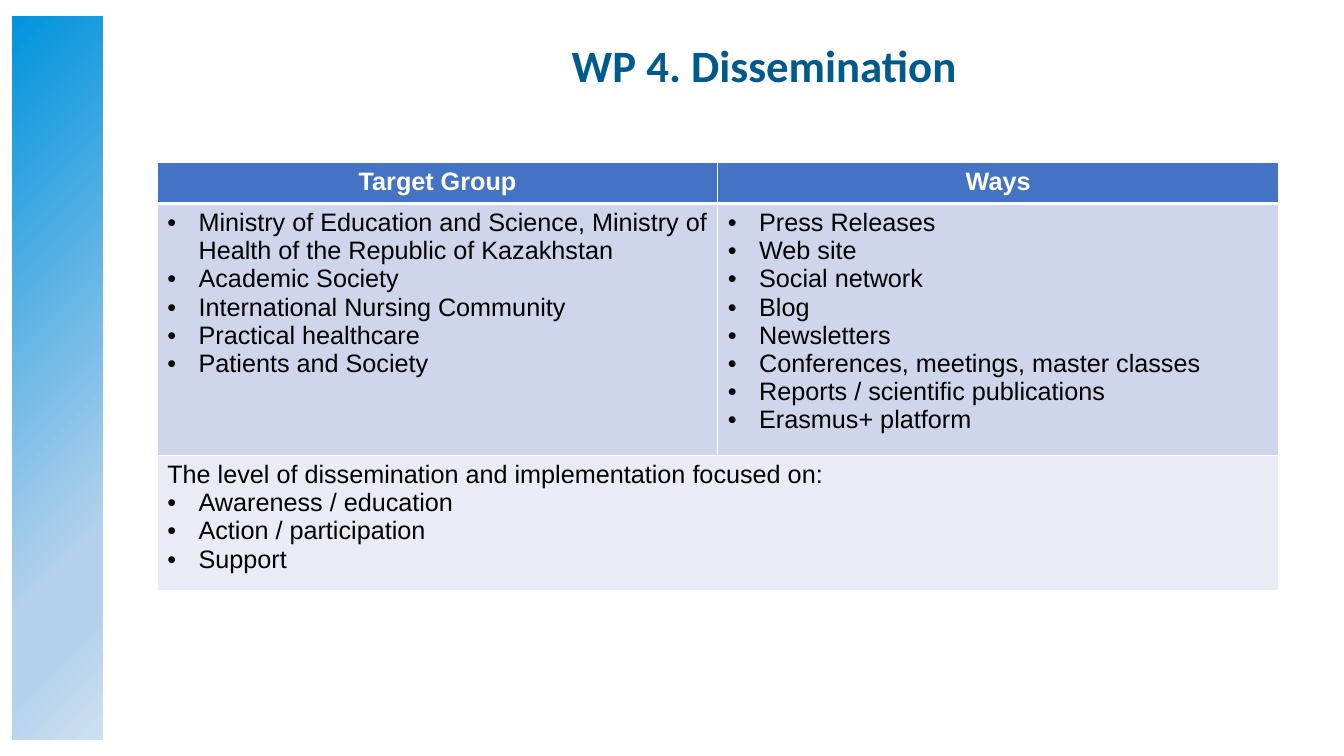
from dataclasses import dataclass

from lxml.etree import SubElement
from pptx import Presentation
from pptx.dml.color import RGBColor
from pptx.enum.shapes import MSO_SHAPE
from pptx.enum.text import MSO_ANCHOR, PP_ALIGN
from pptx.oxml.ns import qn
from pptx.slide import Slide
from pptx.table import _Cell
from pptx.text.text import TextFrame
from pptx.util import Inches, Pt


@dataclass(frozen=True)
class Theme:
    title: str = "005A8C"
    white: str = "FFFFFF"
    text: str = "000000"
    header: str = "4472C4"
    group_row: str = "CFD5EA"
    level_row: str = "E9EBF5"
    band: tuple = ((0, "0093DD"), (74, "B3D1EC"), (83, "B3D1EC"), (100, "CCE0F2"))
    title_font: str = "Calibri"
    table_font: str = "Arial"
    title_size: int = 32
    table_size: int = 18


@dataclass(frozen=True)
class CellContent:
    row: int
    column: int
    fill: str
    heading: str = ""
    bullets: tuple[str, ...] = ()


THEME = Theme()
BULLET_INDENT = Inches(0.31)
COLUMN_WIDTHS = (5.56, 5.56)
ROW_HEIGHTS = (0.41, 2.5, 1.34)
CELLS = (
    CellContent(0, 0, THEME.header, "Target Group"),
    CellContent(0, 1, THEME.header, "Ways"),
    CellContent(1, 0, THEME.group_row, bullets=(
        "Ministry of Education and Science, Ministry of Health of the Republic of Kazakhstan",
        "Academic Society",
        "International Nursing Community",
        "Practical healthcare",
        "Patients and Society",
    )),
    CellContent(1, 1, THEME.group_row, bullets=(
        "Press Releases",
        "Web site",
        "Social network",
        "Blog",
        "Newsletters",
        "Conferences, meetings, master classes",
        "Reports / scientific publications",
        "Erasmus+ platform",
    )),
    CellContent(
        2, 0, THEME.level_row,
        "The level of dissemination and implementation focused on:",
        ("Awareness / education", "Action / participation", "Support"),
    ),
)


def write_paragraph(frame: TextFrame, text: str, *, first: bool = False,
                    font: str = THEME.table_font, size: int = THEME.table_size,
                    color: str = THEME.text, bold: bool = False,
                    align: PP_ALIGN = PP_ALIGN.LEFT, bullet: bool = False,
                    line_spacing: float = 1.0) -> None:
    paragraph = frame.paragraphs[0] if first else frame.add_paragraph()
    paragraph.alignment = align
    paragraph.line_spacing = line_spacing
    paragraph.space_before = Pt(0)
    if bullet:
        properties = paragraph._p.get_or_add_pPr()
        properties.set("marL", str(BULLET_INDENT))
        properties.set("indent", str(-BULLET_INDENT))
        SubElement(properties, qn("a:buFont"), typeface="Arial")
        SubElement(properties, qn("a:buChar"), char="•")
    run = paragraph.add_run()
    run.text = text
    run.font.name = font
    run.font.size = Pt(size)
    run.font.bold = bold
    run.font.color.rgb = RGBColor.from_string(color)


def set_borders(cell: _Cell, widths: dict[str, int]) -> None:
    properties = cell._tc.get_or_add_tcPr()
    for side, width in widths.items():
        line = SubElement(properties, qn(f"a:ln{side}"), w=str(Pt(width)))
        fill = SubElement(line, qn("a:solidFill"))
        SubElement(fill, qn("a:srgbClr"), val=THEME.white)


def add_side_band(slide: Slide) -> None:
    band = slide.shapes.add_shape(
        MSO_SHAPE.RECTANGLE, Inches(0.11), Inches(0.15), Inches(0.92), Inches(7.2))
    band.shadow.inherit = False
    band.line.color.rgb = RGBColor.from_string(THEME.white)
    band.line.width = Pt(1)
    band.fill.gradient()
    band.fill.gradient_angle = 315
    stops = band._element.spPr.find(".//" + qn("a:gsLst"))
    for stop in list(stops):
        stops.remove(stop)
    for position, color in THEME.band:
        stop = SubElement(stops, qn("a:gs"), pos=str(position * 1000))
        SubElement(stop, qn("a:srgbClr"), val=color)


def add_title(slide: Slide, text: str) -> None:
    title = slide.shapes.title
    title.left, title.top = Inches(3.91), Inches(0.14)
    title.width, title.height = Inches(7.34), Inches(1.07)
    frame = title.text_frame
    frame.word_wrap = True
    frame.vertical_anchor = MSO_ANCHOR.MIDDLE
    frame.margin_left = frame.margin_right = Inches(0.1)
    frame.margin_top = frame.margin_bottom = Inches(0.1)
    write_paragraph(frame, text, first=True, font=THEME.title_font,
                    size=THEME.title_size, color=THEME.title, bold=True,
                    align=PP_ALIGN.CENTER, line_spacing=0.9)


def fill_cell(cell: _Cell, content: CellContent) -> None:
    is_header = content.row == 0
    if is_header:
        set_borders(cell, {"L": 1, "R": 1, "T": 1, "B": 3})
    cell.fill.solid()
    cell.fill.fore_color.rgb = RGBColor.from_string(content.fill)
    if content.heading:
        write_paragraph(cell.text_frame, content.heading, first=True, bold=is_header,
                        color=THEME.white if is_header else THEME.text,
                        align=PP_ALIGN.CENTER if is_header else PP_ALIGN.LEFT)
    for index, text in enumerate(content.bullets):
        write_paragraph(cell.text_frame, text, bullet=True,
                        first=index == 0 and not content.heading)


def add_dissemination_table(slide: Slide) -> None:
    table = slide.shapes.add_table(
        len(ROW_HEIGHTS), len(COLUMN_WIDTHS), Inches(1.56), Inches(1.61),
        Inches(sum(COLUMN_WIDTHS)), Inches(sum(ROW_HEIGHTS))).table
    for column, width in zip(table.columns, COLUMN_WIDTHS):
        column.width = Inches(width)
    for row, height in zip(table.rows, ROW_HEIGHTS):
        row.height = Inches(height)
    table.cell(2, 0).merge(table.cell(2, 1))
    for content in CELLS:
        fill_cell(table.cell(content.row, content.column), content)


def main() -> None:
    presentation = Presentation()
    presentation.slide_width = Inches(13.33)
    presentation.slide_height = Inches(7.5)
    slide = presentation.slides.add_slide(presentation.slide_layouts[5])
    add_side_band(slide)
    add_dissemination_table(slide)
    add_title(slide, "WP 4. Dissemination")
    presentation.save("out.pptx")


if __name__ == "__main__":
    main()
